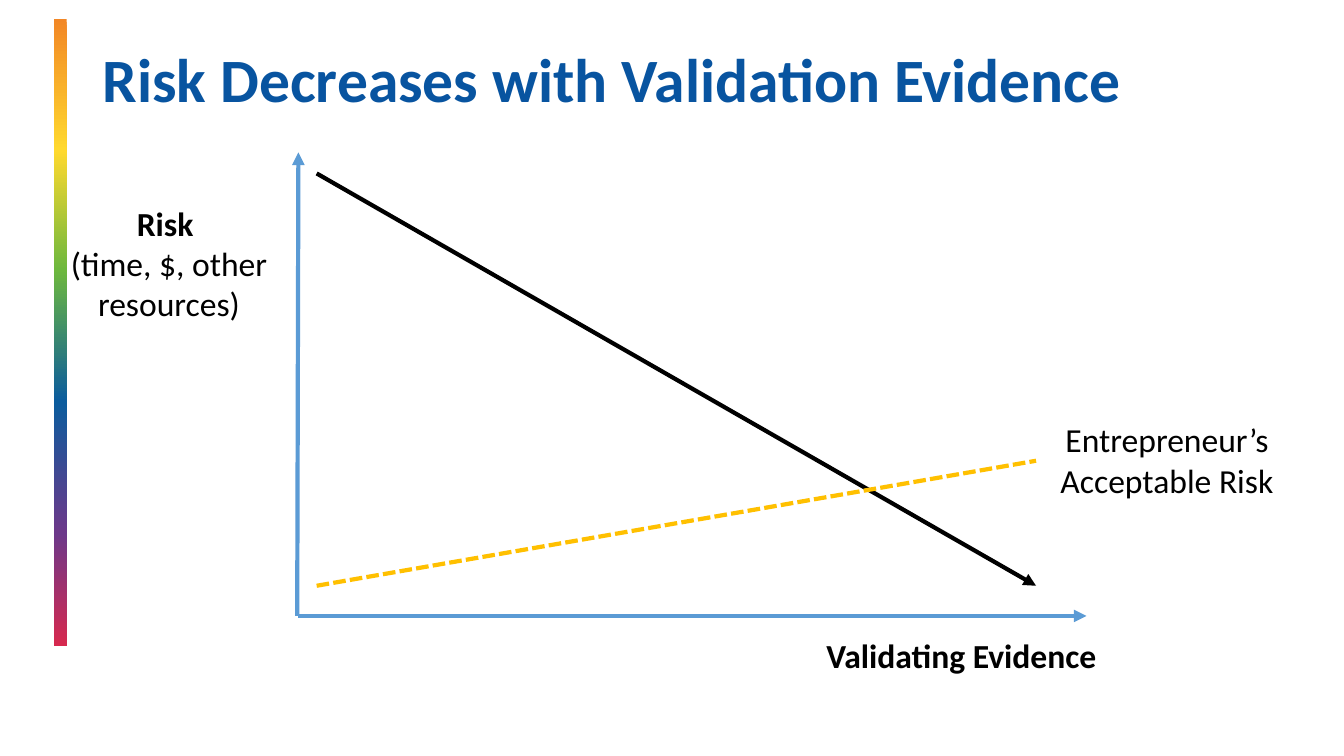
from lxml.etree import SubElement
from pptx import Presentation
from pptx.dml.color import RGBColor
from pptx.enum.dml import MSO_LINE_DASH_STYLE as Dash
from pptx.enum.shapes import MSO_CONNECTOR_TYPE as Connector, MSO_SHAPE as Shape
from pptx.enum.text import MSO_ANCHOR as Anchor, PP_ALIGN as Align
from pptx.oxml.ns import qn
from pptx.util import Cm, Pt

AXIS_BLUE = "5B9BD5"
TITLE_BLUE = "0854A0"
BLACK = "000000"
AMBER = "FFC000"
RAINBOW = [(0, "F28726"), (21, "FFD92E"), (40, "6DB83E"),
           (61, "0B5C9D"), (82, "6C388A"), (100, "D7294E")]


def color(value):
    return RGBColor.from_string(value)


class RiskSlide:
    font = "Calibri"
    label_size = 24
    title_size = 44
    line_width = 3

    def __init__(self, deck):
        self.slide = deck.slides.add_slide(deck.slide_layouts[6])

    def rainbow_bar(self, left, top, width, height):
        bar = self.slide.shapes.add_shape(
            Shape.RECTANGLE, Cm(left), Cm(top), Cm(width), Cm(height))
        bar.shadow.inherit = False
        bar.line.fill.background()
        bar.fill.gradient()
        bar.fill.gradient_angle = 270
        stops = bar.element.spPr.find(qn("a:gradFill")).find(qn("a:gsLst"))
        for stop in list(stops):
            stops.remove(stop)
        for percent, value in RAINBOW:
            stop = SubElement(stops, qn("a:gs"), pos=str(percent * 1000))
            SubElement(stop, qn("a:srgbClr"), val=value)

    def text(self, left, top, width, height, lines, size=label_size,
             value=BLACK, align=Align.CENTER, anchor=Anchor.TOP, spacing=1.0):
        box = self.slide.shapes.add_textbox(
            Cm(left), Cm(top), Cm(width), Cm(height))
        frame = box.text_frame
        frame.word_wrap = True
        frame.vertical_anchor = anchor
        frame.text = "\n".join(line for line, bold in lines)
        for para, (line, bold) in zip(frame.paragraphs, lines):
            para.alignment = align
            para.line_spacing = spacing
            for span in para.runs:
                span.font.name = self.font
                span.font.size = Pt(size)
                span.font.bold = bold
                span.font.color.rgb = color(value)

    def title(self, left, top, width, height, wording):
        self.text(left, top, width, height, [(wording, True)], self.title_size,
                  TITLE_BLUE, Align.LEFT, Anchor.MIDDLE, 0.9)

    def line(self, start, end, value, arrow=True, dash=None):
        connector = self.slide.shapes.add_connector(
            Connector.STRAIGHT, *(Cm(place) for place in (*start, *end)))
        connector.line.color.rgb = color(value)
        connector.line.width = Pt(self.line_width)
        if dash:
            connector.line.dash_style = dash
        properties = connector.element.spPr
        if arrow:
            SubElement(properties.find(qn("a:ln")), qn("a:tailEnd"), type="triangle")
        SubElement(properties, qn("a:effectLst"))


def main():
    deck = Presentation()
    deck.slide_width = Cm(33.87)
    deck.slide_height = Cm(19.05)
    chart = RiskSlide(deck)

    chart.rainbow_bar(1.35, 0.48, 0.33, 15.8)
    chart.title(2.34, 0.25, 29.21, 3.68, "Risk Decreases with Validation Evidence")

    axis_base = 15.52
    chart.line((7.49, axis_base), (7.52, 3.84), AXIS_BLUE)
    chart.line((7.52, axis_base), (27.38, axis_base), AXIS_BLUE)
    chart.text(1.02, 4.98, 6.48, 3.33,
               [("Risk ", True), ("(time, $, other resources)", False)])
    chart.text(20.27, 15.88, 7.92, 1.27, [("Validating Evidence", True)])

    trend_left, trend_right, trend_low = 7.98, 26.11, 14.76
    chart.line((trend_left, 4.37), (trend_right, trend_low), BLACK)
    chart.line((trend_left, trend_low), (trend_right, 11.61), AMBER,
               arrow=False, dash=Dash.SQUARE_DOT)
    chart.text(26.11, 10.44, 6.6, 2.31, [("Entrepreneur’s Acceptable Risk", False)])

    deck.save("out.pptx")


if __name__ == "__main__":
    main()
